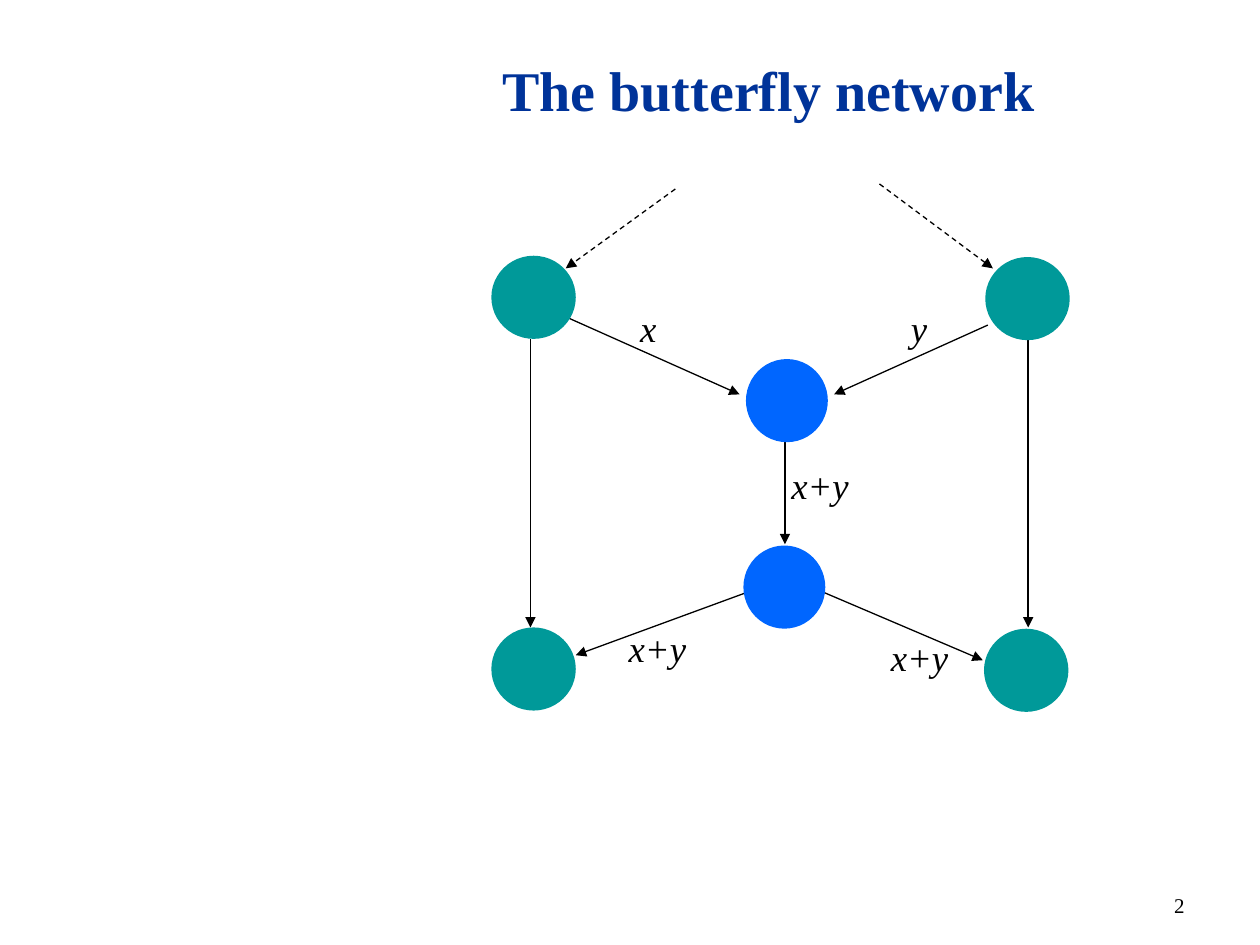
from dataclasses import dataclass

from lxml import etree
from pptx import Presentation
from pptx import util as u
from pptx.dml.color import RGBColor
from pptx.enum import dml, shapes, text
from pptx.oxml import ns

COLUMNS, ROWS = 10, 7.5


@dataclass(frozen=True)
class Theme:
    font: str = "Times New Roman"
    title_color: str = "003399"
    ink: str = "000000"
    terminal: str = "009999"
    relay: str = "0066FF"
    title_size: float = 32
    label_size: float = 21
    number_size: float = 12


class NetworkSlide:
    """Draws on one slide; every length is in grid columns and rows."""

    def __init__(self, presentation, theme):
        self.theme = theme
        self.column = presentation.slide_width / COLUMNS
        self.row = presentation.slide_height / ROWS
        self.slide = presentation.slides.add_slide(presentation.slide_layouts[6])

    def place(self, *lengths):
        """Turn alternating columns and rows into slide lengths."""
        units = (self.column, self.row) * 2
        return [u.Emu(round(length * unit)) for length, unit in zip(lengths, units)]

    def text(self, words, box, size, color, align, anchor, bold=False,
             italic=False, wrap=True, insets=(0.1, 0.05)):
        shape = self.slide.shapes.add_textbox(*self.place(*box))
        frame = shape.text_frame
        frame.word_wrap = wrap
        frame.vertical_anchor = anchor
        frame.margin_left = frame.margin_right = u.Inches(insets[0])
        frame.margin_top = frame.margin_bottom = u.Inches(insets[1])
        if not wrap:
            frame.auto_size = text.MSO_AUTO_SIZE.SHAPE_TO_FIT_TEXT
        paragraph = frame.paragraphs[0]
        paragraph.alignment = align
        run = paragraph.add_run()
        run.text = words
        font = run.font
        font.name, font.size = self.theme.font, u.Pt(size)
        font.bold, font.italic = bold, italic
        font.color.rgb = RGBColor.from_string(color)

    def title(self, words):
        self.text(words, (2.48, 0.28, 7.24, 0.85), self.theme.title_size,
                  self.theme.title_color, text.PP_ALIGN.CENTER,
                  text.MSO_ANCHOR.MIDDLE, bold=True)

    def number(self, words):
        self.text(words, (7.17, 6.83, 2.33, 0.5), self.theme.number_size,
                  self.theme.ink, text.PP_ALIGN.RIGHT, text.MSO_ANCHOR.BOTTOM)

    def edge_label(self, words, left, top):
        width = 0.39 if len(words) == 1 else 0.72
        self.text(words, (left, top, width, 0.48), self.theme.label_size,
                  self.theme.ink, text.PP_ALIGN.LEFT, text.MSO_ANCHOR.TOP,
                  italic=True, wrap=False, insets=(0.13, 0.06))

    def arrow(self, start, end, weight=0.75, dashed=False):
        connector = self.slide.shapes.add_connector(
            shapes.MSO_CONNECTOR.STRAIGHT, *self.place(*start, *end))
        line = connector.line
        line.color.rgb = RGBColor.from_string(self.theme.ink)
        line.width = u.Pt(weight)
        if dashed:
            line.dash_style = dml.MSO_LINE.DASH
        properties = connector._element.spPr
        etree.SubElement(properties.find(ns.qn("a:ln")), ns.qn("a:tailEnd"),
                         type="triangle")
        etree.SubElement(properties, ns.qn("a:effectLst"))

    def node(self, left, top, width, color):
        shape = self.slide.shapes.add_shape(
            shapes.MSO_SHAPE.OVAL, *self.place(left, top, width, 0.66))
        shape.shadow.inherit = False
        shape.fill.solid()
        shape.fill.fore_color.rgb = RGBColor.from_string(color)
        shape.line.fill.background()


def main():
    presentation = Presentation()
    presentation.slide_width, presentation.slide_height = u.Inches(10), u.Inches(7.5)
    theme = Theme()
    network = NetworkSlide(presentation, theme)
    network.title("The butterfly network")

    coding_edges = [
        ((4.48, 2.51), (5.87, 3.13)),
        ((7.84, 2.58), (6.62, 3.13)),
        ((5.96, 4.69), (4.57, 5.2)),
        ((6.51, 4.69), (7.8, 5.24)),
        ((6.23, 3.43), (6.23, 4.32)),
    ]
    for start, end in coding_edges:
        network.arrow(start, end)
    for side in (8.16, 4.21):
        network.arrow((side, 2.69), (side, 4.98), weight=1)
    for start, end in [((5.36, 1.5), (4.49, 2.13)), ((6.98, 1.46), (7.88, 2.13))]:
        network.arrow(start, end, dashed=True)

    for words, left, top in [("x", 4.95, 2.37), ("y", 7.1, 2.37),
                             ("x+y", 6.94, 4.98), ("x+y", 4.86, 4.91),
                             ("x+y", 6.15, 3.61)]:
        network.edge_label(words, left, top)
    network.number("2")

    for left, top in [(7.81, 4.99), (7.82, 2.04), (3.9, 4.98), (3.9, 2.03)]:
        network.node(left, top, 0.67, theme.terminal)
    for left, top in [(5.9, 4.33), (5.92, 2.85)]:
        network.node(left, top, 0.65, theme.relay)

    presentation.save("out.pptx")


if __name__ == "__main__":
    main()
